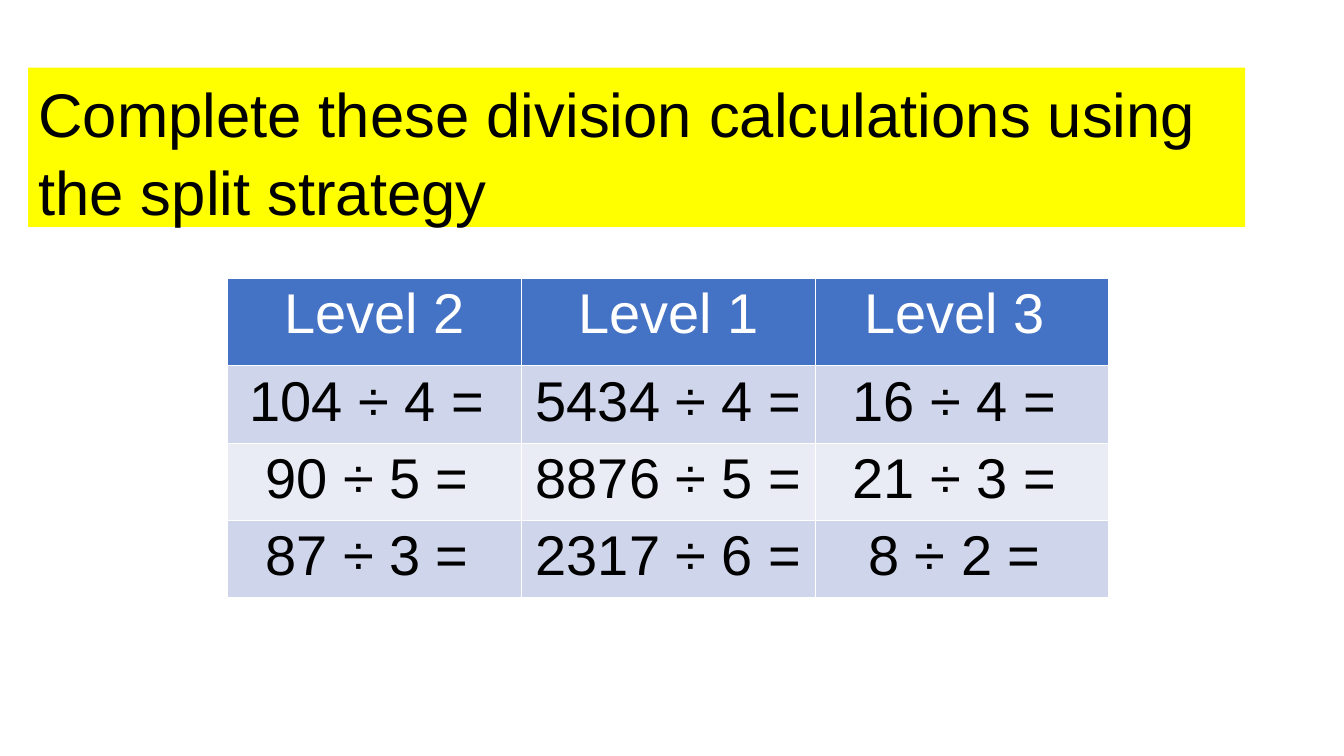
"""Build a slide with division calculations at three levels."""
from pptx import Presentation
from pptx.dml.color import RGBColor
from pptx.enum.text import MSO_ANCHOR, MSO_AUTO_SIZE, PP_ALIGN
from pptx.util import Inches, Pt

CALCULATIONS = [
    ["Level 2", "Level 1", "Level 3 "],
    ["104 ÷ 4 = ", "5434 ÷ 4 = ", "16 ÷ 4 = "],
    ["90 ÷ 5 = ", "8876 ÷ 5 =", "21 ÷ 3 = "],
    ["87 ÷ 3 = ", "2317 ÷ 6 =", "8 ÷ 2 = "],
]
ROW_FILLS = ["4472C4", "CFD5EA", "E9EBF5", "CFD5EA"]
HEADER_HEIGHT = Inches(0.87)
ROW_HEIGHT = Inches(2.3 / 3)
COLUMN_WIDTH = Inches(8.74 / 3)


def paint(fill, color):
    fill.solid()
    fill.fore_color.rgb = RGBColor.from_string(color)


def format_text(paragraph, size, color, alignment):
    paragraph.alignment = alignment
    for run in paragraph.runs:
        run.font.name = "Arial"
        run.font.size = Pt(size)
        run.font.bold = False
        paint(run.font.fill, color)


presentation = Presentation()
presentation.slide_width = Inches(13.33)
presentation.slide_height = Inches(7.5)
slide = presentation.slides.add_slide(presentation.slide_layouts.get_by_name("Title Only"))

title = slide.shapes.title
title.left, title.top = Inches(0.28), Inches(0.67)
title.width, title.height = Inches(12.07), Inches(1.58)
paint(title.fill, "FFFF00")
title.text_frame.text = "Complete these division calculations using the split strategy"
title.text_frame.word_wrap = True
title.text_frame.auto_size = MSO_AUTO_SIZE.NONE
title.text_frame.vertical_anchor = MSO_ANCHOR.TOP
title_paragraph = title.text_frame.paragraphs[0]
title_paragraph.line_spacing = 1.05
format_text(title_paragraph, 44, "000000", PP_ALIGN.LEFT)

table = slide.shapes.add_table(
    len(CALCULATIONS), len(CALCULATIONS[0]), Inches(2.26), Inches(2.76),
    3 * COLUMN_WIDTH, HEADER_HEIGHT + 3 * ROW_HEIGHT,
).table
for column in table.columns:
    column.width = COLUMN_WIDTH
for row_index, (row, texts, row_fill) in enumerate(zip(table.rows, CALCULATIONS, ROW_FILLS)):
    is_header = row_index == 0
    row.height = HEADER_HEIGHT if is_header else ROW_HEIGHT
    for cell, text in zip(row.cells, texts):
        paint(cell.fill, row_fill)
        cell.text_frame.text = text
        text_color = "FFFFFF" if is_header else "000000"
        format_text(cell.text_frame.paragraphs[0], 40, text_color, PP_ALIGN.CENTER)

presentation.save("out.pptx")
